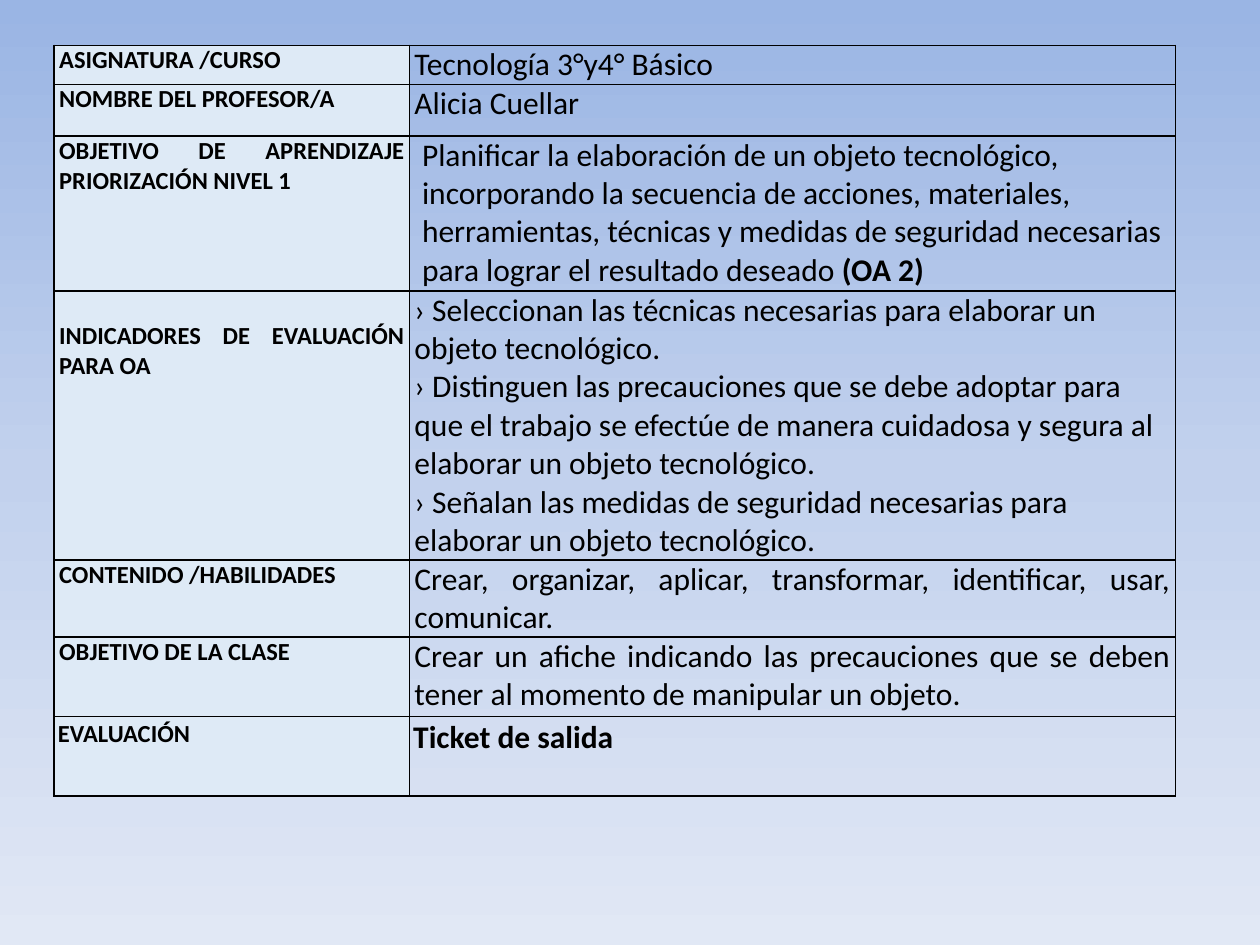
"""Build a class planning slide with a two-column table."""
from copy import deepcopy

from pptx import Presentation
from pptx.dml.color import RGBColor
from pptx.enum.text import PP_ALIGN
from pptx.oxml import parse_xml
from pptx.oxml.ns import nsdecls, qn
from pptx.util import Inches, Pt


def color(value):
    return RGBColor.from_string(value)


def add_border(cell, side):
    cell._tc.get_or_add_tcPr().append(parse_xml(
        f'<a:{side} {nsdecls("a")} w="12700"><a:solidFill><a:srgbClr val="000000"/>'
        f'</a:solidFill></a:{side}>'))


LEFT, JUSTIFY = PP_ALIGN.LEFT, PP_ALIGN.JUSTIFY
SIDE, TOP = 0.04, 0
rows = [
    (0.31, "ASIGNATURA /CURSO", (SIDE, TOP), JUSTIFY,
     [[("Tecnología 3°y4° Básico", False)]], (SIDE, TOP)),
    (0.41, "NOMBRE DEL PROFESOR/A", (SIDE, TOP), JUSTIFY,
     [[("Alicia Cuellar", False)]], (SIDE, TOP)),
    (1.23, "OBJETIVO DE APRENDIZAJE PRIORIZACIÓN NIVEL 1", (SIDE, TOP), LEFT,
     [[("Planificar la elaboración de un objeto tecnológico, incorporando la secuencia de "
        "acciones, materiales, herramientas, técnicas y medidas de seguridad necesarias "
        "para lograr el resultado deseado", False), (" (OA 2)", True)]], (0.1, TOP)),
    (2.13, "INDICADORES DE EVALUACIÓN PARA OA", (SIDE, 0.24), LEFT,
     [[("› Seleccionan las técnicas necesarias para elaborar un objeto tecnológico.", False)],
      [("› Distinguen las precauciones que se debe adoptar para que el trabajo se efectúe de "
        "manera cuidadosa y segura al elaborar un objeto tecnológico.", False)],
      [("› Señalan las medidas de seguridad necesarias para elaborar un objeto tecnológico.",
        False)]], (SIDE, TOP)),
    (0.61, "CONTENIDO /HABILIDADES", (SIDE, TOP), JUSTIFY,
     [[("Crear, organizar, aplicar, transformar, identificar, usar, comunicar.", False)]],
     (SIDE, TOP)),
    (0.63, "OBJETIVO DE LA CLASE", (SIDE, TOP), JUSTIFY,
     [[("Crear un afiche indicando las precauciones que se deben tener al momento de "
        "manipular un objeto.", False)]], (SIDE, TOP)),
    (0.63, "EVALUACIÓN", (0.03, 0.02), JUSTIFY,
     [[("Ticket de salida", True)]], (0.03, 0.02)),
]
column_widths = [2.82, 6.08]

deck = Presentation()
deck.slide_width, deck.slide_height = Inches(10), Inches(7.5)
page = deck.slides.add_slide(deck.slide_layouts[6])

backdrop = page.background.fill
backdrop.gradient()
backdrop.gradient_angle = 270
stop_list = page.element.find(".//" + qn("a:gsLst"))
stop_list.append(deepcopy(stop_list[-1]))
for stop, position, shade in zip(backdrop.gradient_stops, (0, 0.5, 1),
                                 ("9AB5E4", "C2D1ED", "E1E8F5")):
    stop.position = position
    stop.color.rgb = color(shade)

table = page.shapes.add_table(
    len(rows), len(column_widths), Inches(0.43), Inches(0.36),
    Inches(sum(column_widths)), Inches(sum(row[0] for row in rows))).table
table.first_row = table.horz_banding = False
for column, width in zip(table.columns, column_widths):
    column.width = Inches(width)

for index, (height, label, label_insets, alignment, content, insets) in enumerate(rows):
    table.rows[index].height = Inches(height)
    halves = [([[(label, True)]], label_insets, JUSTIFY, 14),
              (content, insets, alignment, 18)]
    for number, (paragraphs, (side, top), align, size) in enumerate(halves):
        cell = table.cell(index, number)
        cell.margin_left = cell.margin_right = Inches(side)
        cell.margin_top = Inches(top)
        cell.margin_bottom = Inches(0)
        for edge in ("lnL", "lnR", "lnT", "lnB"):
            add_border(cell, edge)
        if number == 0:
            cell.fill.solid()
            cell.fill.fore_color.rgb = color("DEEAF6")
        else:
            cell.fill.background()
        frame = cell.text_frame
        for order, runs in enumerate(paragraphs):
            para = frame.add_paragraph() if order else frame.paragraphs[0]
            para.alignment = align
            for text, bold in runs:
                span = para.add_run()
                span.text = text
                span.font.name = "Calibri"
                span.font.size = Pt(size)
                span.font.bold = bold
                span.font.color.rgb = color("000000")

deck.save("out.pptx")
